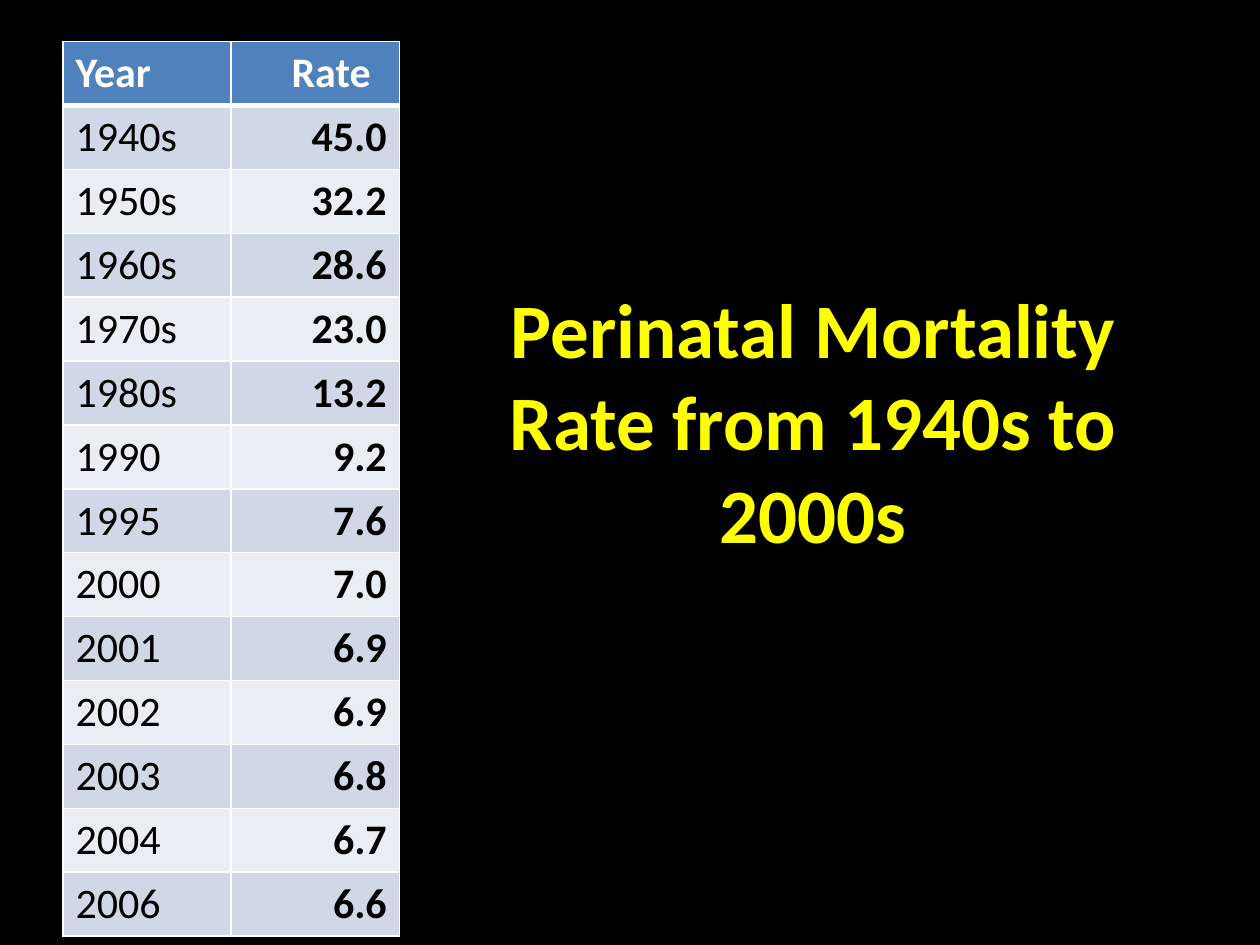
from dataclasses import dataclass

from lxml.etree import SubElement
from pptx import Presentation
from pptx.dml.color import RGBColor as RGB
from pptx.enum.text import MSO_ANCHOR as Anchor, PP_ALIGN as Align
from pptx.oxml.ns import qn
from pptx.util import Emu, Inches, Pt


@dataclass(frozen=True)
class Theme:
    """Colours, font and type sizes of the slide."""
    font: str = "Calibri"
    background: str = "000000"
    title: str = "FFFF00"
    header: str = "4F81BD"
    bands: tuple = ("D0D8E8", "E9EDF4")
    light: str = "FFFFFF"
    dark: str = "000000"
    title_size: int = 44
    table_size: int = 24
    rule: int = 1
    header_rule: int = 3


THEME = Theme()
TITLE = "Perinatal Mortality Rate from 1940s to 2000s"
HEADINGS = ("Year", "Rate")
RATES = (
    ("1940s", "45.0"), ("1950s", "32.2"), ("1960s", "28.6"), ("1970s", "23.0"),
    ("1980s", "13.2"), ("1990", "9.2"), ("1995", "7.6"), ("2000", "7.0"),
    ("2001", "6.9"), ("2002", "6.9"), ("2003", "6.8"), ("2004", "6.7"),
    ("2006", "6.6"),
)


def share(prs, left, top, width, height):
    """Turn shares of the slide's size into a box of lengths."""
    w, h = prs.slide_width, prs.slide_height
    return tuple(Emu(round(v)) for v in (left * w, top * h, width * w, height * h))


def write(tf, text, size, color, bold=False, align=Align.LEFT):
    """Put one formatted paragraph into a text frame."""
    p = tf.paragraphs[0]
    p.alignment = align
    r = p.add_run()
    r.text = text
    r.font.name = THEME.font
    r.font.size = Pt(size)
    r.font.bold = bold
    r.font.color.rgb = RGB.from_string(color)


def set_borders(cell, **widths):
    """Draw light cell borders with a width in points for each side."""
    tc_pr = cell._tc.get_or_add_tcPr()
    for side in "LRTB":
        ln = SubElement(tc_pr, qn(f"a:ln{side}"), w=str(Pt(widths.get(side, THEME.rule))))
        SubElement(SubElement(ln, qn("a:solidFill")), qn("a:srgbClr"), val=THEME.light)


def fill_cell(cell, text, fill, color, bold, align=Align.LEFT, **borders):
    """Format one table cell and write its text."""
    set_borders(cell, **borders)
    cell.fill.solid()
    cell.fill.fore_color.rgb = RGB.from_string(fill)
    write(cell.text_frame, text, THEME.table_size, color, bold, align)


def add_title(s, box):
    """Place the slide title in its box."""
    sp = s.shapes.title
    sp.left, sp.top, sp.width, sp.height = box
    tf = sp.text_frame
    tf.word_wrap = True
    tf.vertical_anchor = Anchor.MIDDLE
    write(tf, TITLE, THEME.title_size, THEME.title, True, Align.CENTER)


def add_rates(s, box):
    """Place the table of rates by year in its box."""
    rows, cols = len(RATES) + 1, len(HEADINGS)
    table = s.shapes.add_table(rows, cols, *box).table
    for column in table.columns:
        column.width = Emu(box[2] // cols)
    for row in table.rows:
        row.height = Emu(box[3] // rows)
    for c, heading in enumerate(HEADINGS):
        fill_cell(table.cell(0, c), heading, THEME.header, THEME.light, True,
                  B=THEME.header_rule)
    table.cell(0, 1).margin_left = Inches(0.48)
    for i, (year, rate) in enumerate(RATES):
        band = THEME.bands[i % 2]
        top = THEME.rule if i else THEME.header_rule
        fill_cell(table.cell(i + 1, 0), year, band, THEME.dark, False, T=top)
        fill_cell(table.cell(i + 1, 1), rate, band, THEME.dark, True, Align.RIGHT, T=top)


def main():
    """Build the slide and save it."""
    prs = Presentation()
    prs.slide_width, prs.slide_height = Inches(10), Inches(7.5)
    s = prs.slides.add_slide(prs.slide_layouts[5])
    s.background.fill.solid()
    s.background.fill.fore_color.rgb = RGB.from_string(THEME.background)
    add_title(s, share(prs, 0.383, 0.311, 0.525, 0.267))
    add_rates(s, share(prs, 0.05, 0.044, 0.267, 0.933))
    prs.save("out.pptx")


if __name__ == "__main__":
    main()
